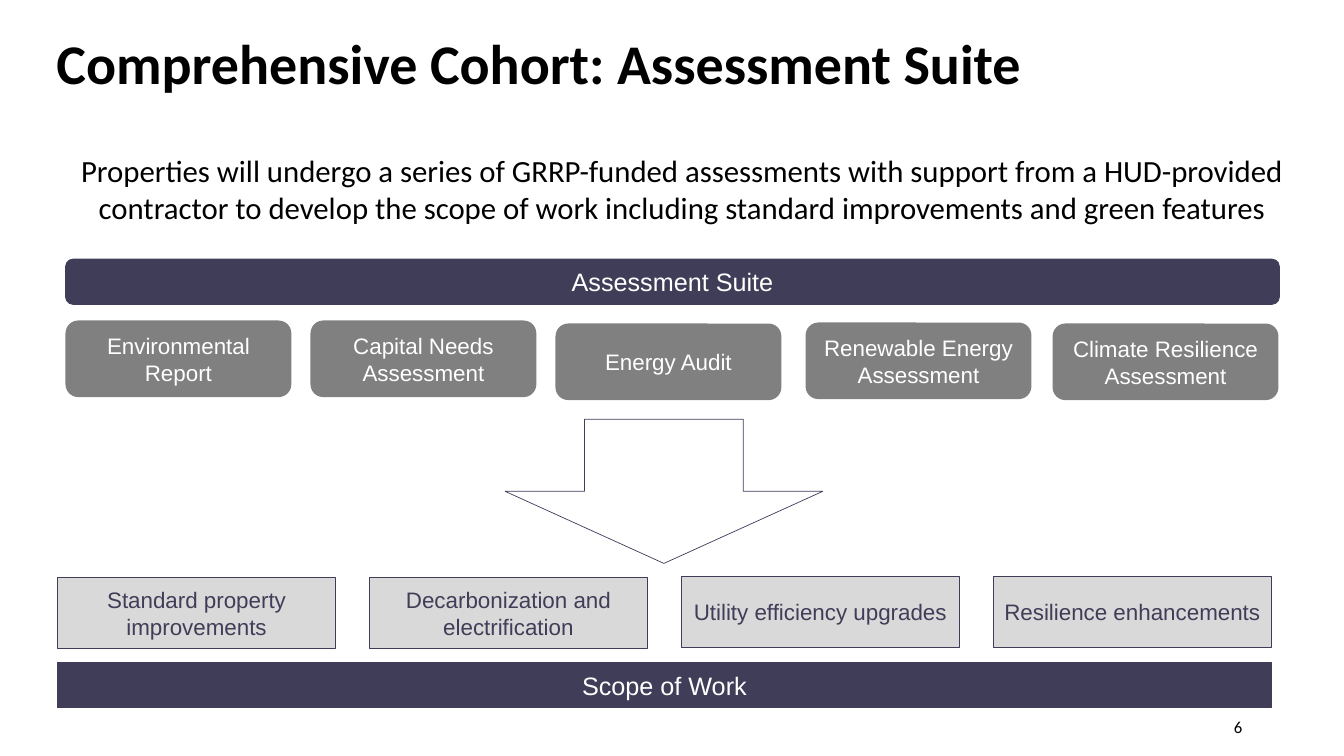
from pptx import Presentation
from pptx.dml.color import RGBColor
from pptx.enum.shapes import MSO_SHAPE
from pptx.enum.text import MSO_ANCHOR, PP_ALIGN
from pptx.util import Inches, Pt

RECTANGLE = MSO_SHAPE.RECTANGLE
ROUNDED = MSO_SHAPE.ROUNDED_RECTANGLE
DOWN_ARROW = MSO_SHAPE.DOWN_ARROW
LEFT, CENTER, RIGHT = PP_ALIGN.LEFT, PP_ALIGN.CENTER, PP_ALIGN.RIGHT
TOP, MIDDLE = MSO_ANCHOR.TOP, MSO_ANCHOR.MIDDLE

COLORS = {
    "navy": "403D58",
    "gray": "808080",
    "light": "D9D9D9",
    "white": "FFFFFF",
    "black": "000000",
}

# Text, left and top of each assessment
ASSESSMENTS = [
    ("Environmental Report", 0.65, 3.18),
    ("Capital Needs Assessment", 3.08, 3.18),
    ("Energy Audit", 5.51, 3.21),
    ("Renewable Energy Assessment", 7.99, 3.2),
    ("Climate Resilience Assessment", 10.44, 3.21),
]
# Text and top of each part of the scope of work
WORK_ITEMS = [
    ("Standard property improvements", 5.73),
    ("Decarbonization and electrification", 5.73),
    ("Utility efficiency upgrades", 5.72),
    ("Resilience enhancements", 5.72),
]
BAR_WIDTH, BAR_HEIGHT = 12.04, 0.45
SCOPE_LEFT = 0.57
WORK_WIDTH = 2.76
INTRO = (
    "Properties will undergo a series of GRRP-funded assessments with support "
    "from a HUD-provided contractor to develop the scope of work including "
    "standard improvements and green features"
)


def color(name):
    return RGBColor.from_string(COLORS[name])


def write_text(shape, text, size, font_name, color_name, align=CENTER,
               anchor=MIDDLE, bold=False):
    frame = shape.text_frame
    frame.word_wrap = True
    frame.vertical_anchor = anchor
    paragraph = frame.paragraphs[0]
    paragraph.alignment = align
    run = paragraph.add_run()
    run.text = text
    run.font.size = Pt(size)
    run.font.name = font_name
    run.font.bold = bold
    run.font.color.rgb = color(color_name)
    return paragraph


def add_title(slide, text):
    title = slide.shapes.title
    title.left, title.top = Inches(0.46), Inches(0.31)
    title.width, title.height = Inches(11.5), Inches(0.69)
    paragraph = write_text(title, text, 40, "Calibri", "black", LEFT, bold=True)
    paragraph.line_spacing = 0.9


def add_label(slide, box, text, size, align, anchor):
    label = slide.shapes.add_textbox(*map(Inches, box))
    write_text(label, text, size, "Calibri", "black", align, anchor)


def add_block(slide, kind, box, fill=None, line=None):
    shape = slide.shapes.add_shape(kind, *map(Inches, box))
    shape.shadow.inherit = False
    if fill:
        shape.fill.solid()
        shape.fill.fore_color.rgb = color(fill)
    else:
        shape.fill.background()
    if line:
        shape.line.color.rgb = color(line)
        shape.line.width = Pt(0.5)
    else:
        shape.line.fill.background()
    return shape


def add_bar(slide, kind, left, top, text):
    bar = add_block(slide, kind, (left, top, BAR_WIDTH, BAR_HEIGHT), "navy", "navy")
    write_text(bar, text, 18, "Arial", "white")


def main():
    presentation = Presentation()
    presentation.slide_width = Inches(13.33)
    presentation.slide_height = Inches(7.5)
    slide = presentation.slides.add_slide(presentation.slide_layouts[5])

    # Heading and introduction
    add_title(slide, "Comprehensive Cohort: Assessment Suite")
    add_label(slide, (0.5, 1.46, 12.53, 0.98), INTRO, 22, CENTER, TOP)

    # Assessment suite
    add_bar(slide, ROUNDED, 0.65, 2.57, "Assessment Suite")
    for text, left, top in ASSESSMENTS:
        assessment = add_block(slide, ROUNDED, (left, top, 2.24, 0.76), "gray")
        write_text(assessment, text, 16, "Arial", "white")

    # Arrow from the assessments to the work
    add_block(slide, DOWN_ARROW, (5.01, 4.16, 3.15, 1.43), line="navy")

    # Scope of work, spread evenly over the width of its bar
    pitch = (BAR_WIDTH - WORK_WIDTH) / (len(WORK_ITEMS) - 1)
    for index, (text, top) in enumerate(WORK_ITEMS):
        box = (SCOPE_LEFT + index * pitch, top, WORK_WIDTH, 0.7)
        item = add_block(slide, RECTANGLE, box, "light", "navy")
        write_text(item, text, 16, "Arial", "navy")
    add_bar(slide, RECTANGLE, SCOPE_LEFT, 6.57, "Scope of Work")

    # Page number
    add_label(slide, (9.42, 7.08, 3, 0.27), "6", 12, RIGHT, MIDDLE)

    presentation.save("out.pptx")


if __name__ == "__main__":
    main()
